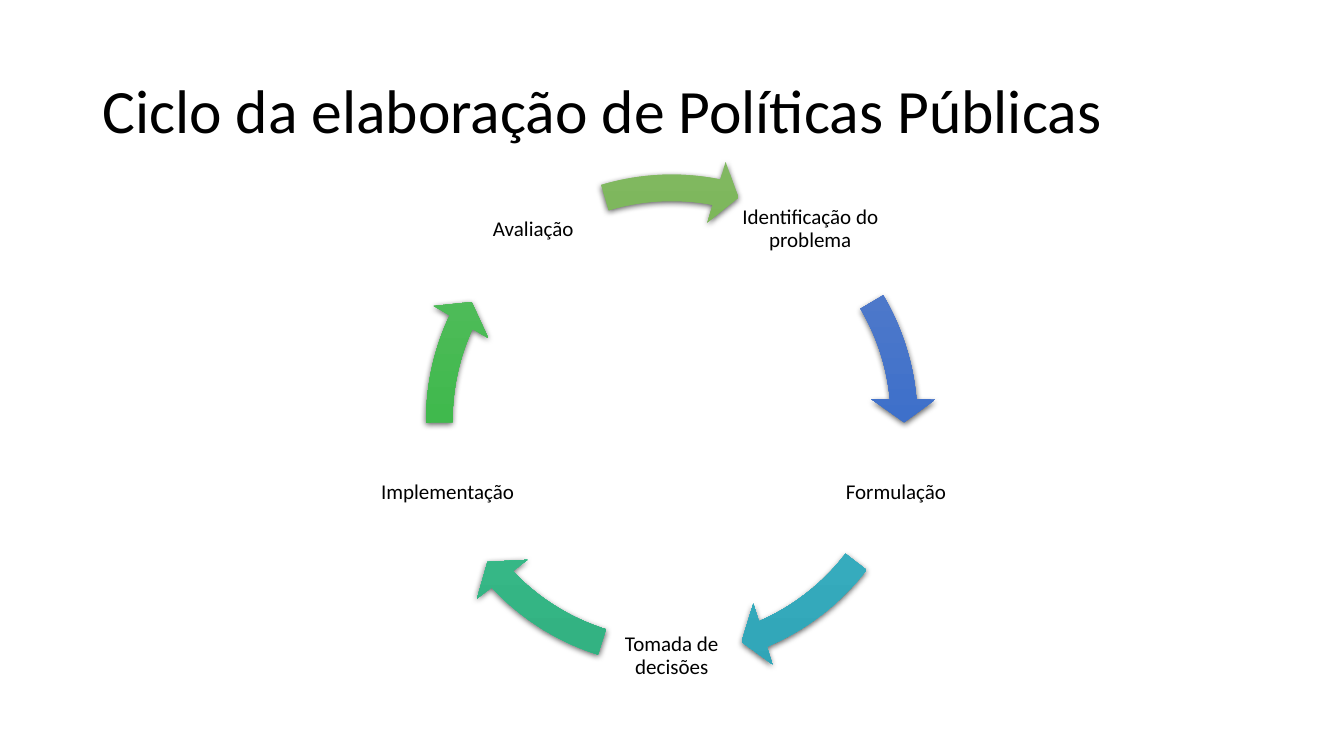
from copy import deepcopy
from math import cos, radians, sin

from lxml.etree import SubElement
from pptx import Presentation
from pptx.dml.color import RGBColor
from pptx.enum.shapes import MSO_SHAPE
from pptx.enum.text import MSO_ANCHOR, MSO_AUTO_SIZE, PP_ALIGN
from pptx.oxml.ns import qn
from pptx.util import Cm, Pt

COLORS = {
    "text": "000000",
    "shadow": "000000",
    "blue": ("6183CB", "3E70CA", "3062BB"),
    "cyan": ("61B8C7", "3DB4C6", "30A5B7"),
    "teal": ("60C39A", "3DC18F", "31B080"),
    "green": ("60BE68", "40B94D", "34AA41"),
    "lime": ("81B861", "6FB242", "62A336"),
}

# Label, colour of the arrow that follows it, start and end angle of that arrow
STAGES = [
    ("Identificação do problema", "blue", 329.43, 354.89),
    ("Formulação", "cyan", 37.55, 66.92),
    ("Tomada de decisões", "teal", 107.49, 136.85),
    ("Implementação", "green", 179.51, 204.97),
    ("Avaliação", "lime", 253.3, 281.1),
]

CENTER_X, CENTER_Y = 16.93, 10.59
RADIUS = 5.94
LABEL_SIZE = 3.56
RING_SIZE = 13.31
FIRST_ANGLE = -54


def write_text(sp, text, size, align=PP_ALIGN.CENTER, inset=None):
    tf = sp.text_frame
    tf.word_wrap = True
    tf.auto_size = MSO_AUTO_SIZE.NONE
    tf.vertical_anchor = MSO_ANCHOR.MIDDLE
    if inset is not None:
        tf.margin_left = tf.margin_right = Cm(inset)
        tf.margin_top = tf.margin_bottom = Cm(inset)
    p = tf.paragraphs[0]
    p.alignment = align
    p.line_spacing = 0.9
    r = p.add_run()
    r.text = text
    r.font.name = "Calibri"
    r.font.size = Pt(size)
    r.font.color.rgb = RGBColor.from_string(COLORS["text"])


def fill_gradient(sp, colors):
    """Fill from top to bottom with evenly spaced stops."""
    sp.fill.gradient()
    sp.fill.gradient_angle = 270
    stop_list = sp._element.spPr.find(qn("a:gradFill")).find(qn("a:gsLst"))
    stop_list.append(deepcopy(stop_list[-1]))
    for i, (stop, color) in enumerate(zip(sp.fill.gradient_stops, colors)):
        stop.position = i / (len(colors) - 1)
        stop.color.rgb = RGBColor.from_string(color)


def add_soft_shadow(sp):
    sp.shadow.inherit = False
    effects = sp._element.spPr.find(qn("a:effectLst"))
    shadow = SubElement(effects, qn("a:outerShdw"), blurRad=str(Pt(4.5)),
                        dist=str(Pt(1.5)), dir="5400000", algn="ctr", rotWithShape="0")
    color = SubElement(shadow, qn("a:srgbClr"), val=COLORS["shadow"])
    SubElement(color, qn("a:alpha"), val="63000")


def add_label(shapes, text, angle):
    """Centre a label on the cycle at an angle, clockwise from the right."""
    left = CENTER_X + RADIUS * cos(radians(angle)) - LABEL_SIZE / 2
    top = CENTER_Y + RADIUS * sin(radians(angle)) - LABEL_SIZE / 2
    sp = shapes.add_textbox(Cm(left), Cm(top), Cm(LABEL_SIZE), Cm(LABEL_SIZE))
    write_text(sp, text, 15, inset=0.05)


def add_arrow(shapes, color, start, end):
    sp = shapes.add_shape(
        MSO_SHAPE.CIRCULAR_ARROW,
        Cm(CENTER_X - RING_SIZE / 2), Cm(CENTER_Y - RING_SIZE / 2),
        Cm(RING_SIZE), Cm(RING_SIZE))
    # Angles are stored as 0.6 per degree: 60000 units over a scale of 100000
    values = (0.05, 5.6 * 0.6, end * 0.6, start * 0.6, 0.06)
    for i, value in enumerate(values):
        sp.adjustments[i] = value
    fill_gradient(sp, COLORS[color])
    sp.line.fill.background()
    add_soft_shadow(sp)


def main():
    prs = Presentation()
    prs.slide_width, prs.slide_height = Cm(33.87), Cm(19.05)
    slide = prs.slides.add_slide(prs.slide_layouts[5])

    title = slide.shapes.title
    title.left, title.top = Cm(2.33), Cm(1.01)
    title.width, title.height = Cm(29.21), Cm(3.68)
    write_text(title, "Ciclo da elaboração de Políticas Públicas", 44,
               align=PP_ALIGN.LEFT)

    cycle = slide.shapes.add_group_shape()
    for i, (text, color, start, end) in enumerate(STAGES):
        add_label(cycle.shapes, text, FIRST_ANGLE + i * 360 / len(STAGES))
        add_arrow(cycle.shapes, color, start, end)

    prs.save("out.pptx")


if __name__ == "__main__":
    main()
